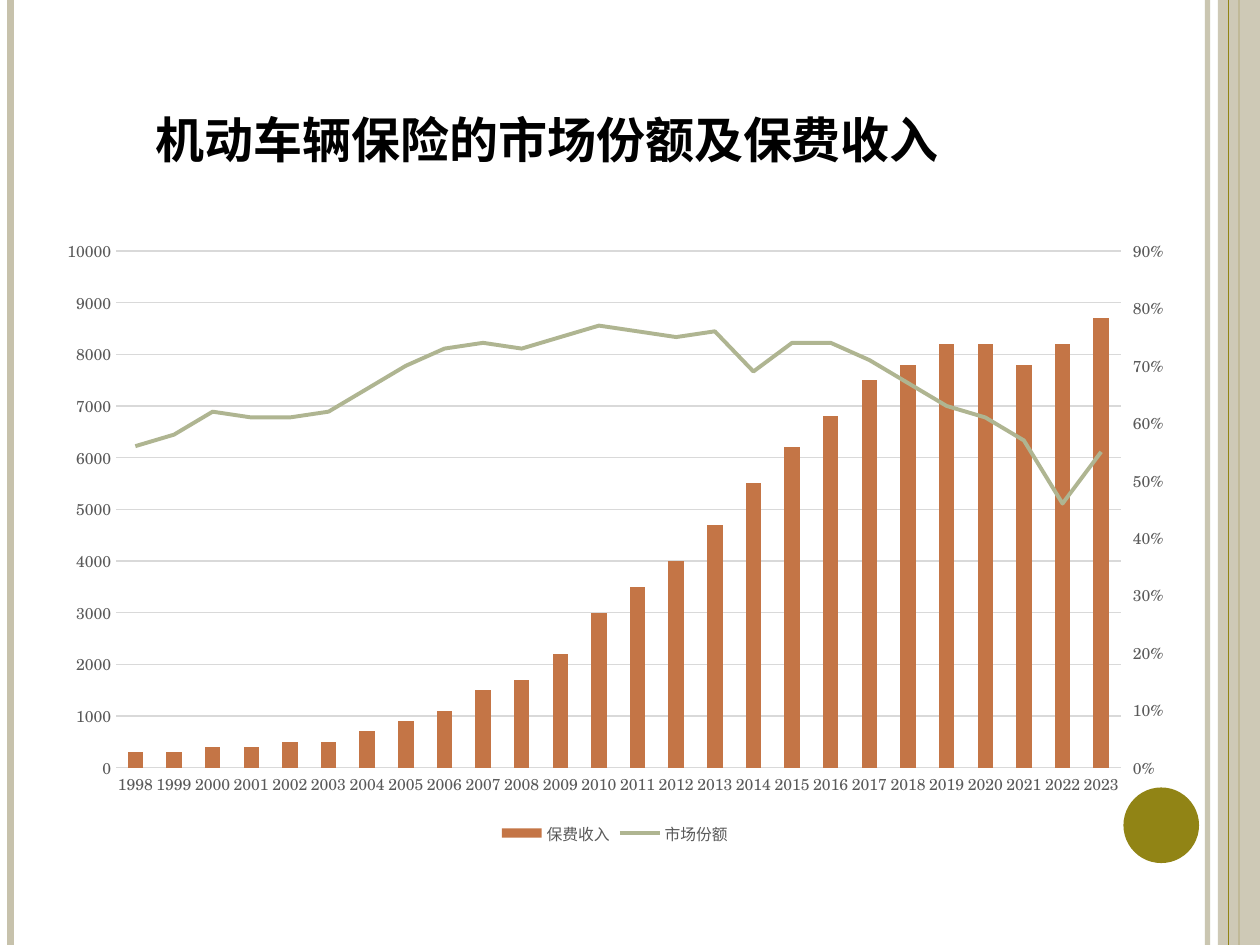
from copy import deepcopy

from lxml import etree
from pptx import Presentation
from pptx import util as u
from pptx.chart.axis import CategoryAxis, ValueAxis
from pptx.chart.data import CategoryChartData
from pptx.dml.color import RGBColor
from pptx.enum import chart as ch, shapes, text
from pptx.oxml import ns, parse_xml

COLORS = {"sand": "C7C2AC", "olive": "918415", "black": "000000", "gray": "595959",
          "grid": "D9D9D9", "orange": "C47546", "sage": "AFB591"}
TITLE_FONT = "Times New Roman"
CHART_FONT = "TeX Gyre Schola"
YEARS = [str(year) for year in range(1998, 2024)]
PREMIUMS = [300, 300, 400, 400, 500, 500, 700, 900, 1100, 1500, 1700, 2200, 3000,
            3500, 4000, 4700, 5500, 6200, 6800, 7500, 7800, 8200, 8200, 7800, 8200, 8700]
SHARES = [0.56, 0.58, 0.62, 0.61, 0.61, 0.62, 0.66, 0.70, 0.73, 0.74, 0.73, 0.75, 0.77,
          0.76, 0.75, 0.76, 0.69, 0.74, 0.74, 0.71, 0.67, 0.63, 0.61, 0.57, 0.46, 0.55]
PLOT_AREA = {"x": 0.063, "y": 0.039, "w": 0.88, "h": 0.83}


class SlideBuilder:
    def __init__(self, prs):
        self.width, self.height = prs.slide_width, prs.slide_height
        self.slide = prs.slides.add_slide(prs.slide_layouts[6])

    def color(self, name):
        return RGBColor.from_string(COLORS[name])

    def box(self, lengths):
        return [u.Pt(n) for n in lengths]

    def font(self, font, size, color, name, bold=False):
        font.size, font.name, font.bold = u.Pt(size), name, bold
        font.color.rgb = self.color(color)

    def stroke(self, line, color, width):
        line.color.rgb = self.color(color)
        line.width = u.Pt(width)

    def alpha(self, sp, percent):
        clr = next(sp._element.spPr.iter(ns.qn("a:srgbClr")))
        etree.SubElement(clr, ns.qn("a:alpha")).set("val", str(percent * 1000))

    def rule(self, x, color, width, opacity=100):
        sp = self.slide.shapes.add_connector(
            shapes.MSO_CONNECTOR.STRAIGHT, u.Pt(x), 0, u.Pt(x), self.height)
        self.stroke(sp.line, color, width)
        if opacity < 100:
            self.alpha(sp, opacity)
        etree.SubElement(sp._element.spPr, ns.qn("a:effectLst"))

    def shape(self, kind, lengths, color, opacity=100):
        sp = self.slide.shapes.add_shape(kind, *self.box(lengths))
        sp.shadow.inherit = False
        sp.fill.solid()
        sp.fill.fore_color.rgb = self.color(color)
        sp.line.fill.background()
        if opacity < 100:
            self.alpha(sp, opacity)

    def title(self, lengths, content):
        tf = self.slide.shapes.add_textbox(*self.box(lengths)).text_frame
        tf.word_wrap = True
        tf.vertical_anchor = text.MSO_ANCHOR.MIDDLE
        r = tf.paragraphs[0].add_run()
        r.text = content
        self.font(r.font, 28, "black", TITLE_FONT, True)

    def combo_chart(self, lengths):
        data = CategoryChartData()
        data.categories = YEARS
        data.add_series("保费收入", PREMIUMS, "General")
        data.add_series("市场份额", SHARES, "0%")
        chart = self.slide.shapes.add_chart(
            ch.XL_CHART_TYPE.COLUMN_CLUSTERED, *self.box(lengths), data).chart
        self.font(chart.font, 10, "black", CHART_FONT)
        chart.has_title = False
        chart.has_legend = True
        chart.legend.position = ch.XL_LEGEND_POSITION.BOTTOM
        chart.legend.include_in_layout = False
        self.font(chart.legend.font, 9, "gray", CHART_FONT)

        for axis in (chart.category_axis, chart.value_axis):
            axis.major_tick_mark = axis.minor_tick_mark = ch.XL_TICK_MARK.NONE
            self.font(axis.tick_labels.font, 9, "gray", CHART_FONT)
        self.stroke(chart.category_axis.format.line, "grid", 0.75)
        value = chart.value_axis
        value.minimum_scale, value.maximum_scale, value.major_unit = 0, 10000, 1000
        value.format.line.fill.background()
        self.stroke(value.major_gridlines.format.line, "grid", 0.75)

        bars = chart.plots[0]
        bars.gap_width = 150
        bars.vary_by_categories = False
        fill = bars.series[0].format.fill
        fill.solid()
        fill.fore_color.rgb = self.color("orange")
        self.move_to_line(chart)
        line = chart.plots[1].series[0]
        line.smooth = False
        line.marker.style = ch.XL_MARKER_STYLE.NONE
        self.stroke(line.format.line, "sage", 2.25)
        self.place_plot(chart)

    def move_to_line(self, chart):
        bar = chart.plots[0]._element
        ser = bar.findall(ns.qn("c:ser"))[1]
        for el in ser.findall(ns.qn("c:invertIfNegative")):
            ser.remove(el)
        line = parse_xml(
            f'<c:lineChart {ns.nsdecls("c")}><c:grouping val="standard"/>'
            '<c:varyColors val="0"/><c:marker val="1"/>'
            '<c:axId val="501"/><c:axId val="502"/></c:lineChart>')
        line.insert(2, ser)
        bar.addnext(line)

        left = chart.value_axis._element
        cat, val = deepcopy(chart.category_axis._element), deepcopy(left)
        left.addnext(val)
        val.addnext(cat)
        for el, own, other in ((cat, "501", "502"), (val, "502", "501")):
            el.find(ns.qn("c:axId")).set("val", own)
            el.find(ns.qn("c:crossAx")).set("val", other)
        CategoryAxis(cat).visible = False
        val.find(ns.qn("c:axPos")).set("val", "r")
        val.find(ns.qn("c:crosses")).set("val", "max")
        right = ValueAxis(val)
        right.has_major_gridlines = False
        right.maximum_scale, right.major_unit = 0.9, 0.1
        right.major_tick_mark = ch.XL_TICK_MARK.OUTSIDE
        right.tick_labels.number_format = "0%"
        right.tick_labels.number_format_is_linked = False

    def place_plot(self, chart):
        area = chart.plots[0]._element.getparent()
        for el in area.findall(ns.qn("c:layout")):
            area.remove(el)
        sizes = "".join(f'<c:{k} val="{v}"/>' for k, v in PLOT_AREA.items())
        area.insert(0, parse_xml(
            f'<c:layout {ns.nsdecls("c")}><c:manualLayout><c:layoutTarget val="inner"/>'
            f'<c:xMode val="edge"/><c:yMode val="edge"/>{sizes}'
            '</c:manualLayout></c:layout>'))


def main():
    prs = Presentation()
    prs.slide_width, prs.slide_height = u.Pt(720), u.Pt(540)
    s = SlideBuilder(prs)
    s.rule(690, "sand", 3, 93)
    s.rule(6, "sand", 4.5)
    s.rule(708, "olive", 1.5)
    s.shape(shapes.MSO_SHAPE.RECTANGLE, (696, 0, 24, 540), "sand", 87)
    s.rule(702, "olive", 0.75)
    s.shape(shapes.MSO_SHAPE.OVAL, (642, 450, 43.2, 43.2), "olive")
    s.title((82, 59, 516, 41), "机动车辆保险的市场份额及保费收入")
    s.combo_chart((25.2, 129.6, 652.3, 355.7))
    prs.save("out.pptx")


if __name__ == "__main__":
    main()
